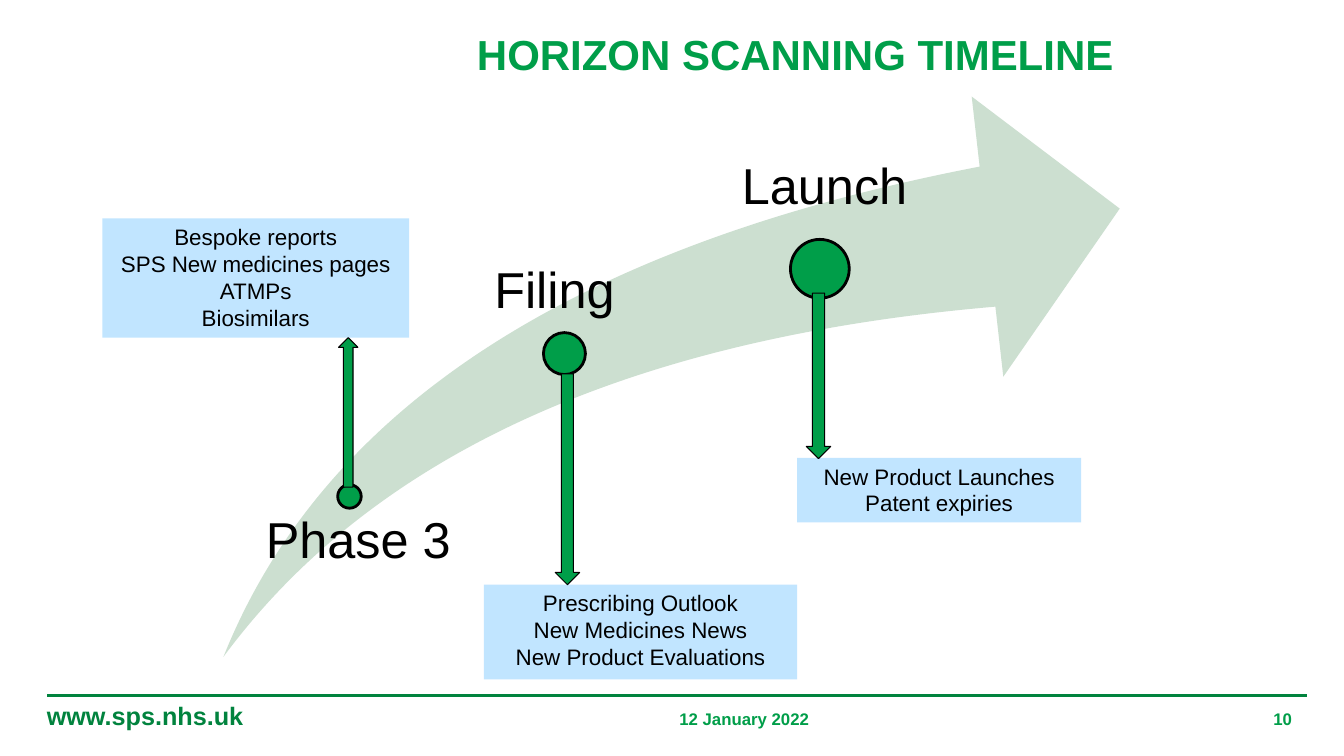
from lxml import etree
from pptx import Presentation
from pptx.dml.color import RGBColor
from pptx.enum.shapes import MSO_CONNECTOR, MSO_SHAPE
from pptx.enum.text import MSO_ANCHOR, PP_ALIGN
from pptx.oxml.ns import qn
from pptx.util import Emu, Inches, Pt

LEFT, CENTER, RIGHT = PP_ALIGN.LEFT, PP_ALIGN.CENTER, PP_ALIGN.RIGHT
TOP = MSO_ANCHOR.TOP
STRAIGHT = MSO_CONNECTOR.STRAIGHT
RECTANGLE, CIRCLE, SWOOSH = MSO_SHAPE.RECTANGLE, MSO_SHAPE.OVAL, MSO_SHAPE.SWOOSH_ARROW
UP, DOWN = MSO_SHAPE.UP_ARROW, MSO_SHAPE.DOWN_ARROW

COLUMNS, ROWS = 160, 90
GREEN, DARK_GREEN, PALE_GREEN = "009E49", "01833E", "CCDFD0"
PALE_BLUE, BLACK = "C1E5FF", "000000"


def rgb(value):
    return RGBColor.from_string(value)


class TimelineSlide:
    """Draws on one slide; every place is (column, row, columns wide, rows high)."""

    font = "Arial"

    def __init__(self, deck):
        self.column = deck.slide_width / COLUMNS
        self.row = deck.slide_height / ROWS
        self.shapes = deck.slides.add_slide(deck.slide_layouts[6]).shapes

    def place(self, x, y, width, height):
        return [Emu(round(share * unit)) for share, unit in
                zip((x, y, width, height), (self.column, self.row) * 2)]

    def fill_text(self, frame, lines, size, color, bold=False, align=LEFT):
        frame.word_wrap = True
        frame.vertical_anchor = TOP
        frame.text = "\n".join(lines)
        for paragraph in frame.paragraphs:
            paragraph.alignment = align
            for run in paragraph.runs:
                run.font.name = self.font
                run.font.size = Pt(size)
                run.font.bold = bold
                run.font.color.rgb = rgb(color)

    def text(self, place, line, size, color, bold=True, align=LEFT):
        frame = self.shapes.add_textbox(*self.place(*place)).text_frame
        self.fill_text(frame, [line], size, color, bold, align)
        return frame

    def stage_name(self, place, name, indent):
        frame = self.text(place, name, 36, BLACK, bold=False)
        frame.margin_left = Inches(indent)
        frame.margin_top = frame.margin_right = frame.margin_bottom = 0
        frame.paragraphs[0].line_spacing = 0.9

    def shape(self, kind, place, fill, outline=None):
        """Adds a filled shape; outline is a black line's width in points."""
        shape = self.shapes.add_shape(kind, *self.place(*place))
        shape.shadow.inherit = False
        shape.fill.solid()
        shape.fill.fore_color.rgb = rgb(fill)
        if outline:
            shape.line.color.rgb = rgb(BLACK)
            shape.line.width = Pt(outline)
        else:
            shape.line.fill.background()
        return shape

    def marker(self, x, y, diameter):
        """Adds a milestone circle centred on (x, y)."""
        corner = x - diameter / 2, y - diameter / 2
        self.shape(CIRCLE, (*corner, diameter, diameter), GREEN, 2)

    def outputs(self, place, lines):
        box = self.shape(RECTANGLE, place, PALE_BLUE)
        self.fill_text(box.text_frame, lines, 16, BLACK, align=CENTER)

    def rule(self, start, end, y):
        x1, y1, x2, y2 = self.place(start, y, end, y)
        line = self.shapes.add_connector(STRAIGHT, x1, y1, x2, y2)
        line.line.color.rgb = rgb(DARK_GREEN)
        line.line.width = Pt(1.5)
        etree.SubElement(line._element.spPr, qn("a:effectLst"))


# name, name place, name indent, marker (x, y, diameter),
# outputs place, outputs, arrow direction, arrow place
STAGES = [
    ("Phase 3", (30.2, 61.3, 24.8, 19.3), 0.12, (41.6, 59.1, 2.8),
     (12.2, 26, 36.5, 14.2),
     ["Bespoke reports", "SPS New medicines pages", "ATMPs", "Biosimilars"],
     UP, (40.3, 40.2, 2.3, 17.8)),
    ("Filing", (56.2, 31.6, 25.6, 36.2), 0.22, (67.2, 42.1, 5),
     (57.6, 69.6, 37.3, 11.3),
     ["Prescribing Outlook", "New Medicines News", "New Product Evaluations"],
     DOWN, (66.1, 44.5, 2.9, 25.1)),
    ("Launch", (84.6, 19.2, 25.6, 46.3), 0.31, (97.6, 32, 7),
     (94.9, 54.5, 33.8, 7.7),
     ["New Product Launches", "Patent expiries"],
     DOWN, (96, 34.9, 2.9, 19.7)),
]


def main():
    deck = Presentation()
    deck.slide_width, deck.slide_height = Inches(13.33), Inches(7.5)
    slide = TimelineSlide(deck)

    slide.rule(5.6, 155.6, 82.8)
    slide.text((4.4, 82.8, 70.6, 4.8), "www.sps.nhs.uk", 18, DARK_GREEN)
    slide.text((55.6, 2.8, 80.9, 11.4), "HORIZON SCANNING TIMELINE", 30, GREEN)
    slide.text((68.6, 83.8, 40, 4.2), "12 January 2022", 12, GREEN, align=CENTER)
    slide.text((114, 83.8, 41, 4.2), "10", 12, GREEN, align=RIGHT)

    swoosh = slide.shape(SWOOSH, (26.6, 11.5, 106.7, 66.7), PALE_GREEN)
    swoosh.adjustments[0] = swoosh.adjustments[1] = 0.25

    for name, name_place, indent, marker, box, outputs, direction, arrow in STAGES:
        slide.marker(*marker)
        slide.stage_name(name_place, name, indent)
        slide.outputs(box, outputs)
        slide.shape(direction, arrow, GREEN, 0.75)

    deck.save("out.pptx")


if __name__ == "__main__":
    main()
